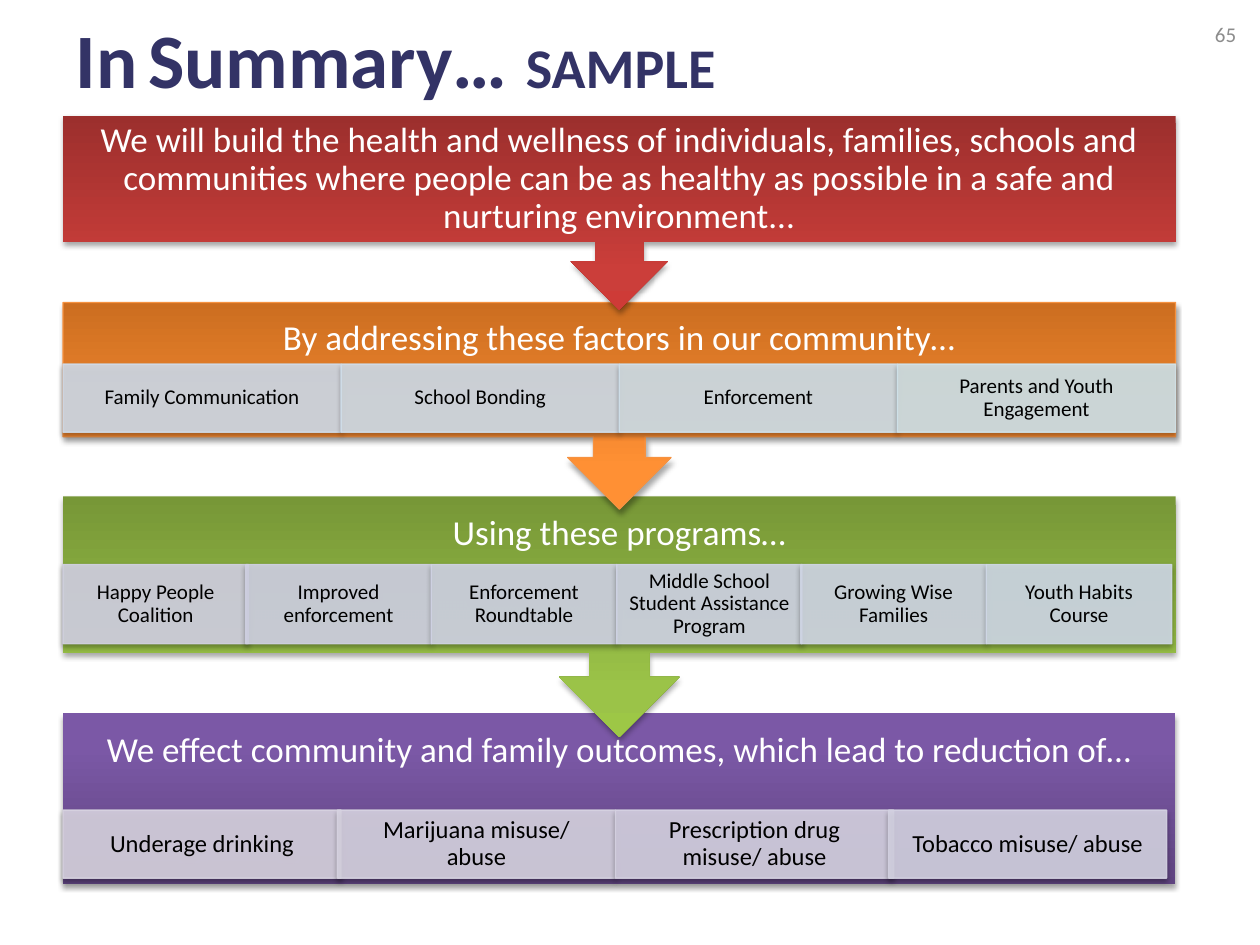
from dataclasses import dataclass
from typing import Optional

from lxml.etree import SubElement
from pptx import Presentation
from pptx.dml.color import RGBColor
from pptx.enum.shapes import MSO_SHAPE
from pptx.enum.text import MSO_ANCHOR, PP_ALIGN
from pptx.oxml import parse_xml
from pptx.oxml.ns import nsdecls, qn
from pptx.util import Inches, Pt

FONT = "Calibri"
LEFT, WIDTH = 0.5, 8.83
COLORS = {
    "title": "333366", "number": "8C8C8C", "black": "000000", "white": "FFFFFF",
    "orange_line": "F69240",
}
GRADIENTS = {
    "red": ("9C2F2D", "CB3E3A", "CE3B37"),
    "orange": ("CC6E20", "FF9034", "FF9136"),
    "green": ("779737", "9BC348", "9DC746"),
    "purple": ("5F4480", "7B58A6", "7C57A8"),
}


@dataclass
class Tile:
    text: str
    color: str
    nudge: float = 0


@dataclass
class Band:
    name: str
    text: str
    top: float
    height: float
    head: float
    anchor: MSO_ANCHOR
    tiles: tuple[Tile, ...] = ()
    tile_top: float = 0
    tile_height: float = 0.54
    size: int = 12
    inset: float = 0.09
    arrow: bool = True
    line: Optional[str] = None


BANDS = [
    Band("purple", "We effect community and family outcomes, which lead to reduction of…",
         5.66, 1.36, 0.73, MSO_ANCHOR.TOP, (
             Tile("Underage drinking", "D8D3E0"),
             Tile("Marijuana misuse/ abuse", "D7D3E1", -0.03),
             Tile("Prescription drug misuse/ abuse", "D6D2E2", -0.03),
             Tile("Tobacco misuse/ abuse", "D4D2E2", -0.07),
         ), 6.43, size=14, inset=0.11, arrow=False),
    Band("green", "Using these programs…", 3.94, 1.91, 0.67, MSO_ANCHOR.TOP, (
        Tile("Happy People Coalition", "D3D2E3"),
        Tile("Improved enforcement", "D1D2E4", -0.02),
        Tile("Enforcement Roundtable", "D1D4E5", -0.02),
        Tile("Middle School\nStudent Assistance Program", "D1D5E6", -0.02),
        Tile("Growing Wise Families", "D1D7E6", -0.03),
        Tile("Youth Habits Course", "D0D9E7", -0.03),
    ), 4.48, 0.63),
    Band("orange", "By addressing these factors in our community…",
         2.4, 1.64, 0.58, MSO_ANCHOR.MIDDLE, (
             Tile("Family Communication", "D0DBE8"),
             Tile("School Bonding", "D0DDE9"),
             Tile("Enforcement", "D0E0EA"),
             Tile("Parents and Youth Engagement", "D0E3EA"),
         ), 2.89, line=COLORS["orange_line"]),
    Band("red", "We will build the health and wellness of individuals, families, schools and "
         "communities where people can be as healthy as possible in a safe and nurturing "
         "environment...", 0.92, 1.54, 1, MSO_ANCHOR.MIDDLE),
]


def add_run(p, text: str, size: float, color: str, bold: bool = False) -> None:
    r = p.add_run()
    r.text = text
    r.font.name = FONT
    r.font.size = Pt(size)
    r.font.bold = bold
    r.font.color.rgb = RGBColor.from_string(color)


def fill_text(s, text: str, size: float, color: str, anchor: MSO_ANCHOR,
              inset: tuple[float, float], align: PP_ALIGN = PP_ALIGN.CENTER) -> None:
    tf = s.text_frame
    tf.word_wrap = True
    tf.vertical_anchor = anchor
    tf.margin_left = tf.margin_right = Inches(inset[0])
    tf.margin_top = tf.margin_bottom = Inches(inset[1])
    for i, line in enumerate(text.split("\n")):
        p = tf.add_paragraph() if i else tf.paragraphs[0]
        p.alignment = align
        p.line_spacing = 0.9
        add_run(p, line, size, color)


def add_box(sl, kind: MSO_SHAPE, left: float, top: float, width: float, height: float):
    s = sl.shapes.add_shape(kind, Inches(left), Inches(top), Inches(width), Inches(height))
    s.line.fill.background()
    return s


def add_label(sl, left: float, top: float, width: float, height: float):
    return sl.shapes.add_textbox(Inches(left), Inches(top), Inches(width), Inches(height))


def add_shadow(s) -> None:
    s.shadow.inherit = False
    effects = s._element.spPr.find(qn("a:effectLst"))
    effects.append(parse_xml(
        f'<a:outerShdw {nsdecls("a")} blurRad="{Pt(3.1)}" dist="{Pt(1.8)}" dir="5400000" '
        'rotWithShape="0"><a:srgbClr val="000000"><a:alpha val="35000"/></a:srgbClr>'
        '</a:outerShdw>'))


def set_gradient(s, colors: tuple[str, ...]) -> None:
    stops = "".join(f'<a:gs pos="{pos}"><a:srgbClr val="{c}"/></a:gs>'
                    for pos, c in zip((0, 80000, 100000), colors))
    s._element.spPr.find(qn("a:prstGeom")).addnext(parse_xml(
        f'<a:gradFill {nsdecls("a")} rotWithShape="1"><a:gsLst>{stops}</a:gsLst>'
        '<a:lin ang="16200000" scaled="0"/></a:gradFill>'))


def add_tile(sl, band: Band, i: int, tile: Tile) -> None:
    width = WIDTH / len(band.tiles)
    s = add_box(sl, MSO_SHAPE.RECTANGLE, LEFT + i * width + tile.nudge,
                band.tile_top, width, band.tile_height)
    s.fill.solid()
    s.line.fill.solid()
    s.line.width = Pt(0.75)
    for color in (s.fill.fore_color, s.line.color):
        color.rgb = RGBColor.from_string(tile.color)
    for clr in s._element.spPr.iter(qn("a:srgbClr")):
        SubElement(clr, qn("a:alpha")).set("val", "90000")
    add_shadow(s)
    fill_text(s, tile.text, band.size, COLORS["black"], MSO_ANCHOR.MIDDLE, (band.inset, 0.02))


def add_band(sl, band: Band) -> None:
    kind = MSO_SHAPE.UP_ARROW_CALLOUT if band.arrow else MSO_SHAPE.RECTANGLE
    s = add_box(sl, kind, LEFT, band.top, WIDTH, band.height)
    s.rotation = 180 if band.arrow else 0
    set_gradient(s, GRADIENTS[band.name])
    if band.line:
        s.line.color.rgb = RGBColor.from_string(band.line)
        s.line.width = Pt(0.75)
    add_shadow(s)
    label = add_label(sl, LEFT, band.top, WIDTH, band.head)
    fill_text(label, band.text, 20, COLORS["white"], band.anchor, (0.16, 0.16))
    for i, tile in enumerate(band.tiles):
        add_tile(sl, band, i, tile)


def add_title(sl) -> None:
    s = sl.shapes.title
    s.left, s.top, s.width, s.height = Inches(0.5), 0, Inches(8.5), Inches(0.92)
    tf = s.text_frame
    tf.vertical_anchor = MSO_ANCHOR.MIDDLE
    p = tf.paragraphs[0]
    p.alignment = PP_ALIGN.LEFT
    add_run(p, "In", 44, COLORS["title"], True)
    add_run(p, " ", 27, COLORS["black"])
    add_run(p, "Summary… ", 44, COLORS["title"], True)
    add_run(p, "SAMPLE", 32, COLORS["title"], True)


def main() -> None:
    prs = Presentation()
    prs.slide_width, prs.slide_height = Inches(10), Inches(7.5)
    sl = prs.slides.add_slide(prs.slide_layouts[5])
    number = add_label(sl, 7.58, 0.08, 2.33, 0.4)
    fill_text(number, "65", 12, COLORS["number"], MSO_ANCHOR.MIDDLE, (0.1, 0.05), PP_ALIGN.RIGHT)
    add_title(sl)
    for band in BANDS:
        add_band(sl, band)
    prs.save("out.pptx")


if __name__ == "__main__":
    main()
